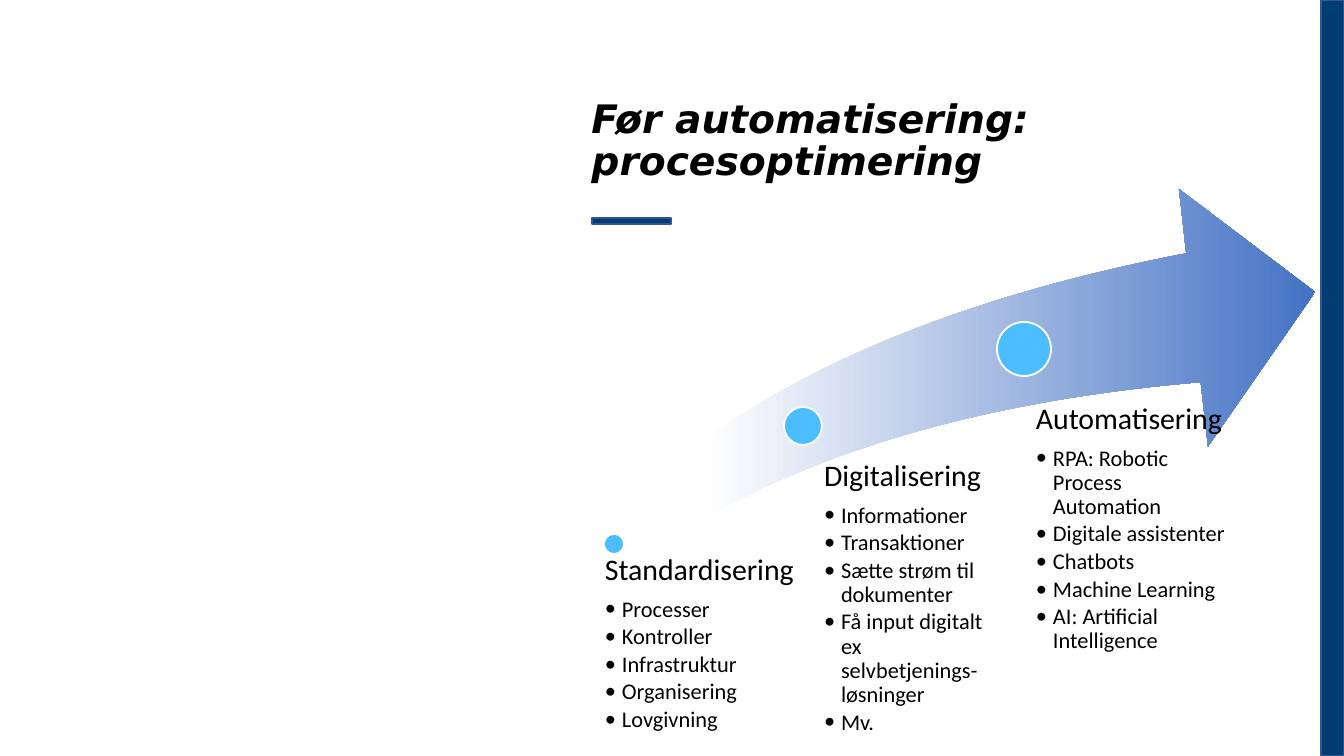
from lxml.etree import SubElement
from pptx import Presentation
from pptx.dml.color import RGBColor
from pptx.enum.shapes import MSO_SHAPE as Preset
from pptx.enum.text import MSO_ANCHOR as Anchor, MSO_AUTO_SIZE as AutoSize, PP_ALIGN as Align
from pptx.oxml.ns import qn
from pptx.util import Pt

EMU_PER_PX = 914400 / 134.4
COLOURS = {"navy": "003E71", "edge": "325491", "arrow": "4472C4",
           "dot": "4CBDFF", "white": "FFFFFF", "black": "000000"}
HEADING = {"name": "Calibri", "size": Pt(16)}
ITEM = {"name": "Calibri", "size": Pt(12)}
TITLE = {"name": "DejaVu Sans", "size": Pt(21), "bold": True, "italic": True}
HEADING_SPACING = {"line_spacing": 0.9, "space_after": Pt(5.6)}
ITEM_SPACING = {"level": 1, "line_spacing": 0.9, "space_after": Pt(1.8)}
BULLET_INDENT = 17

BARS = [(592, 218, 79, 6), (1321, 0, 23, 756)]
STAGES = [
    ("Standardisering", (604, 534, 20), (594, 555, 231, 149), 11,
     ["Processer", "Kontroller", "Infrastruktur", "Organisering", "Lovgivning"]),
    ("Digitalisering", (784, 407, 38), (804, 461, 197, 172), 20,
     ["Informationer", "Transaktioner", "Sætte strøm til dokumenter",
      "Få input digitalt ex selvbetjenings-løsninger", "Mv."]),
    ("Automatisering", (997, 322, 54), (1008, 404, 221, 197), 28,
     ["RPA: Robotic Process Automation", "Digitale assistenter", "Chatbots",
      "Machine Learning", "AI: Artificial Intelligence"]),
]


def px(length):
    """Turn pixels into EMU."""
    return round(length * EMU_PER_PX)


def colour(key):
    """Look up a colour by its role."""
    return RGBColor.from_string(COLOURS[key])


def apply_format(target, values):
    """Set each named attribute on the target."""
    for attribute, value in values.items():
        setattr(target, attribute, value)


def add_run(paragraph, text, font_values):
    """Add black text in the given font."""
    run = paragraph.add_run()
    run.text = text
    apply_format(run.font, font_values)
    run.font.color.rgb = colour("black")


def add_title(slide, text, box):
    """Place and format the title placeholder."""
    title = slide.shapes.title
    apply_format(title, dict(zip(("left", "top", "width", "height"), map(px, box))))
    apply_format(title.text_frame, {"word_wrap": True, "auto_size": AutoSize.NONE,
                                    "vertical_anchor": Anchor.MIDDLE})
    paragraph = title.text_frame.paragraphs[0]
    apply_format(paragraph, {"alignment": Align.LEFT, "line_spacing": 0.9})
    add_run(paragraph, text, TITLE)


def add_solid(slide, preset, box, fill, edge):
    """Add a filled shape with a thin outline."""
    shape = slide.shapes.add_shape(preset, *map(px, box))
    shape.shadow.inherit = False
    shape.fill.solid()
    shape.fill.fore_color.rgb = colour(fill)
    shape.line.color.rgb = colour(edge)
    shape.line.width = Pt(1)


def add_swoosh(slide, box):
    """Add the rising arrow that fades in from white."""
    swoosh = slide.shapes.add_shape(Preset.SWOOSH_ARROW, *map(px, box))
    swoosh.shadow.inherit = False
    swoosh.adjustments[0] = swoosh.adjustments[1] = 0.25
    swoosh.line.fill.background()
    swoosh.fill.gradient()
    swoosh.fill.gradient_angle = 0
    fade = [(0.26, "white"), (1, "arrow")]
    for stop, (position, key) in zip(swoosh.fill.gradient_stops, fade):
        stop.color.rgb = colour(key)
        stop.position = position


def add_bullet(paragraph):
    """Give a paragraph a hanging bullet."""
    properties = paragraph._p.get_or_add_pPr()
    properties.set("marL", str(px(BULLET_INDENT)))
    properties.set("indent", str(-px(BULLET_INDENT)))
    SubElement(properties, qn("a:buFont"), typeface="Calibri")
    SubElement(properties, qn("a:buChar"), char="•")


def add_stage(slide, heading, dot, box, inset, items):
    """Add a stage's dot, heading and bullet list."""
    left, top, size = dot
    add_solid(slide, Preset.OVAL, (left, top, size, size), "dot", "white")
    frame = slide.shapes.add_textbox(*map(px, box)).text_frame
    apply_format(frame, {"word_wrap": True, "auto_size": AutoSize.NONE,
                         "vertical_anchor": Anchor.TOP, "margin_left": px(inset),
                         "margin_top": 0, "margin_right": 0, "margin_bottom": 0})
    apply_format(frame.paragraphs[0], HEADING_SPACING)
    add_run(frame.paragraphs[0], heading, HEADING)
    for item in items:
        paragraph = frame.add_paragraph()
        add_bullet(paragraph)
        apply_format(paragraph, ITEM_SPACING)
        add_run(paragraph, item, ITEM)


def main():
    """Build the slide and save it."""
    deck = Presentation()
    deck.slide_width, deck.slide_height = px(1344), px(756)
    slide = deck.slides.add_slide(deck.slide_layouts[5])
    add_title(slide, "Før automatisering: procesoptimering", (578, 95, 583, 94))
    for bar in BARS:
        add_solid(slide, Preset.RECTANGLE, bar, "navy", "edge")
    add_swoosh(slide, (491, 189, 824, 515))
    for stage in STAGES:
        add_stage(slide, *stage)
    deck.save("out.pptx")


if __name__ == "__main__":
    main()
